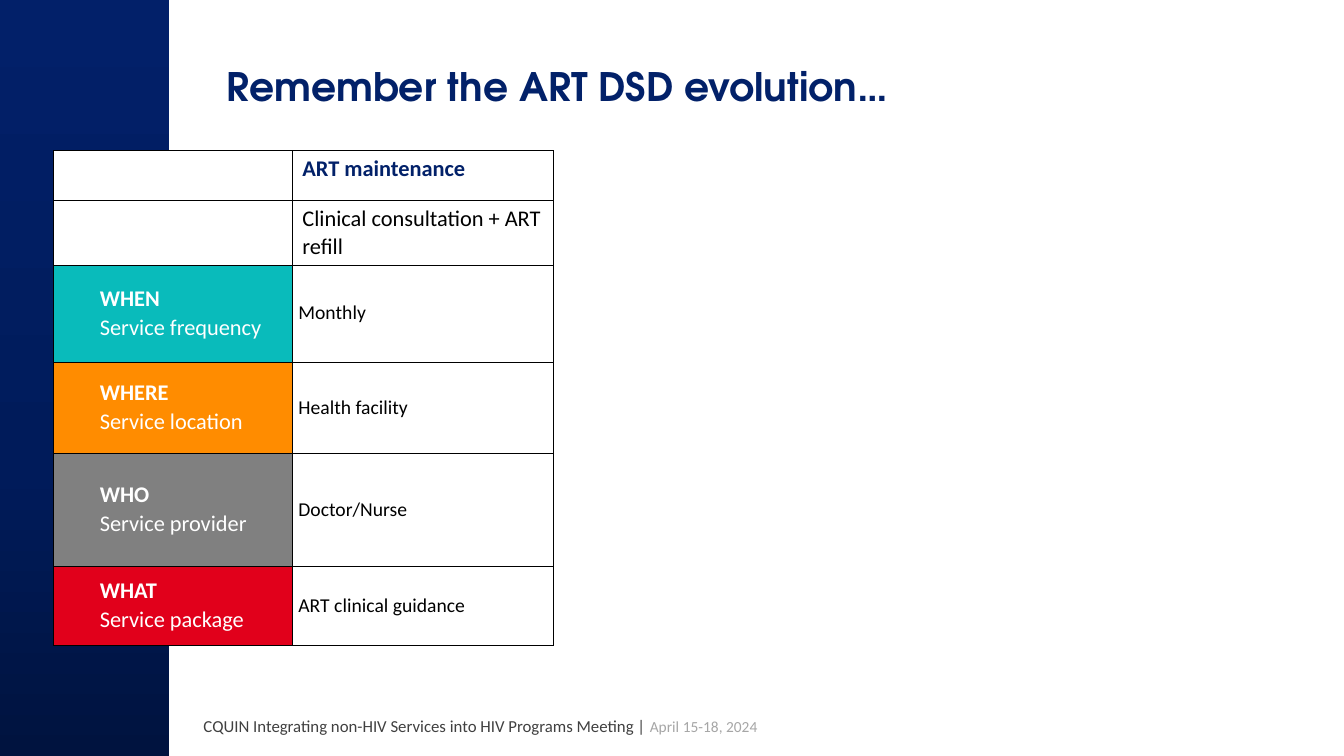
from copy import deepcopy

from lxml import etree
from pptx import Presentation
from pptx.dml.color import RGBColor
from pptx.enum.shapes import MSO_SHAPE
from pptx.enum.text import MSO_ANCHOR
from pptx.oxml.ns import qn
from pptx.util import Inches, Pt

RECTANGLE = MSO_SHAPE.RECTANGLE
TOP, MIDDLE = MSO_ANCHOR.TOP, MSO_ANCHOR.MIDDLE
BODY_FONT, TITLE_FONT = "Calibri", "TeX Gyre Adventor"

COLORS = {
    "navy": "022169", "band_dark": "00133F", "band_mid": "001B5A", "band_light": "022069",
    "white": "FFFFFF", "black": "000000", "text_gray": "404040", "date_gray": "A6A6A6",
    "teal": "09BBBB", "orange": "FF8C00", "gray": "808080", "red": "E1001B",
}


def add_run(paragraph, text, size, color, bold=False, font=BODY_FONT):
    run = paragraph.add_run()
    run.text = text
    run.font.name = font
    run.font.size = Pt(size)
    run.font.bold = bold
    run.font.color.rgb = RGBColor.from_string(COLORS[color])


def add_text_area(left, top, width, height, anchor):
    frame = slide.shapes.add_textbox(
        Inches(left), Inches(top), Inches(width), Inches(height)).text_frame
    frame.word_wrap = True
    frame.vertical_anchor = anchor
    return frame.paragraphs[0]


prs = Presentation()
prs.slide_width, prs.slide_height = Inches(13.33), Inches(7.5)
slide = prs.slides.add_slide(prs.slide_layouts[6])

# Side band with a three-stop gradient running upwards
band = slide.shapes.add_shape(RECTANGLE, 0, 0, Inches(1.68), prs.slide_height)
band.shadow.inherit = False
band.line.fill.background()
band.fill.gradient()
band.fill.gradient_angle = 90
stop_list = band.fill._xPr.find(qn("a:gradFill")).find(qn("a:gsLst"))
stop_list.insert(1, deepcopy(stop_list[0]))
band_stops = [(0, "band_dark"), (0.38, "band_mid"), (1, "band_light")]
for stop, (position, color) in zip(band.fill.gradient_stops, band_stops):
    stop.position = position
    stop.color.rgb = RGBColor.from_string(COLORS[color])

# Footer and title
footer = add_text_area(1.92, 7, 6.9, 0.4, MIDDLE)
add_run(footer, "CQUIN Integrating non-HIV Services into HIV Programs Meeting | ", 12, "text_gray")
add_run(footer, "April 15-18, 2024", 11, "date_gray")
title = add_text_area(2.15, 0.57, 10, 0.92, TOP)
add_run(title, "Remember the ART DSD evolution…", 28, "navy", True, TITLE_FONT)

# Service table
column_widths = [2.37, 2.59]
row_heights = [0.5, 0.64, 0.96, 0.91, 1.12, 0.78]
services = slide.shapes.add_table(
    len(row_heights), len(column_widths), Inches(0.53), Inches(1.49),
    Inches(sum(column_widths)), Inches(sum(row_heights))).table
services.first_row = services.horz_banding = False
for column, width in zip(services.columns, column_widths):
    column.width = Inches(width)
for row, height in zip(services.rows, row_heights):
    row.height = Inches(height)

# Thin black borders and white fill for every cell
for cell in services.iter_cells():
    properties = cell._tc.get_or_add_tcPr()
    for side in ("a:lnL", "a:lnR", "a:lnT", "a:lnB"):
        border = etree.SubElement(properties, qn(side), w=str(Pt(0.25)))
        border_fill = etree.SubElement(border, qn("a:solidFill"))
        etree.SubElement(border_fill, qn("a:srgbClr"), val=COLORS["black"])
    cell.fill.solid()
    cell.fill.fore_color.rgb = RGBColor.from_string(COLORS["white"])

# Heading rows
add_run(services.cell(0, 1).text_frame.paragraphs[0], "ART maintenance", 16, "navy", True)
add_run(services.cell(1, 1).text_frame.paragraphs[0],
        "Clinical consultation + ART refill", 16, "black")

# Building block rows: question, aspect, block color, answer
blocks = [
    ("WHEN", "Service frequency", "teal", "Monthly"),
    ("WHERE", "Service location", "orange", "Health facility"),
    ("WHO", "Service provider", "gray", "Doctor/Nurse"),
    ("WHAT", "Service package", "red", "ART clinical guidance"),
]
for row_index, (question, aspect, color, answer) in enumerate(blocks, start=2):
    block_cell, answer_cell = services.cell(row_index, 0), services.cell(row_index, 1)
    block_cell.fill.fore_color.rgb = RGBColor.from_string(COLORS[color])
    for cell in (block_cell, answer_cell):
        cell.vertical_anchor = MIDDLE
        cell.margin_left = cell.margin_bottom = Inches(0.06)
        cell.margin_top = cell.margin_right = Inches(0.04)

    question_line = block_cell.text_frame.paragraphs[0]
    aspect_line = block_cell.text_frame.add_paragraph()
    answer_line = answer_cell.text_frame.paragraphs[0]
    for line in (question_line, aspect_line):
        line._p.get_or_add_pPr().set("marL", str(Inches(0.4)))
    for line in (question_line, aspect_line, answer_line):
        line.line_spacing = 1.05
    add_run(question_line, question, 16, "white", True)
    add_run(aspect_line, aspect, 16, "white")
    add_run(answer_line, answer, 14, "black")

prs.save("out.pptx")
